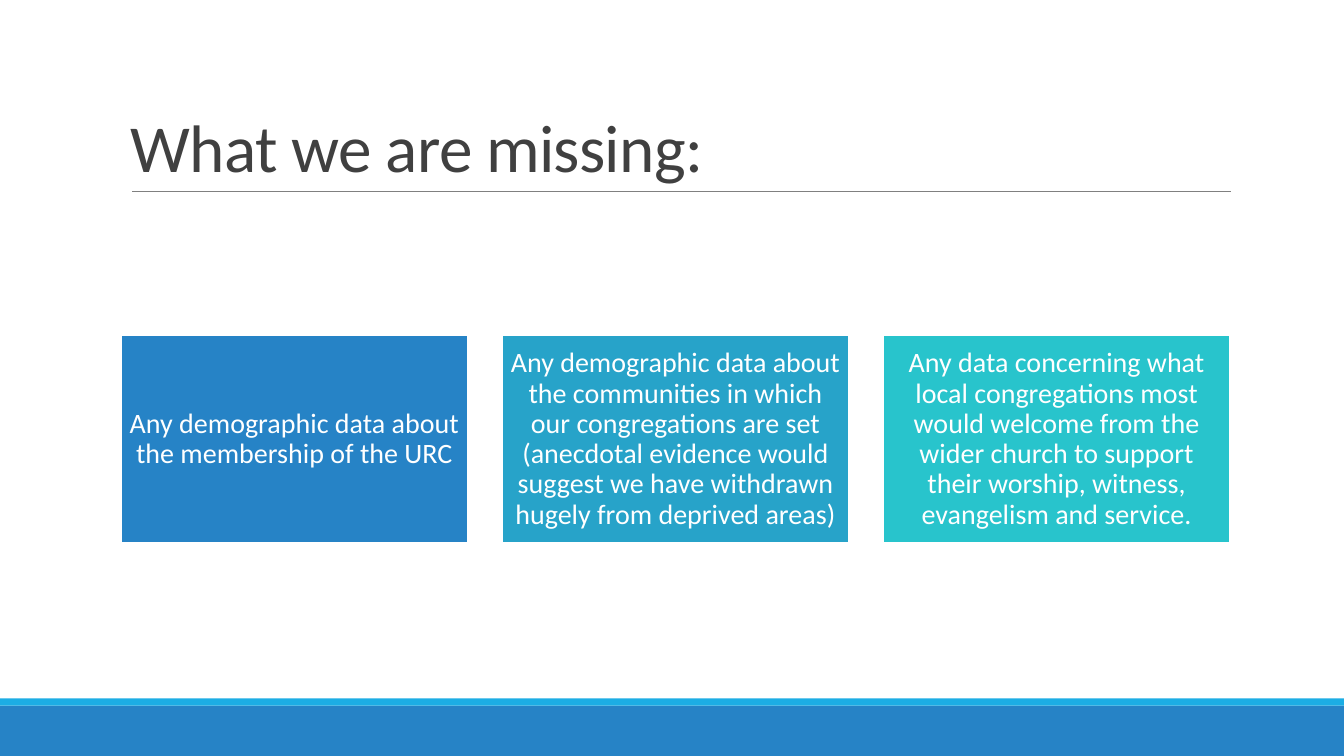
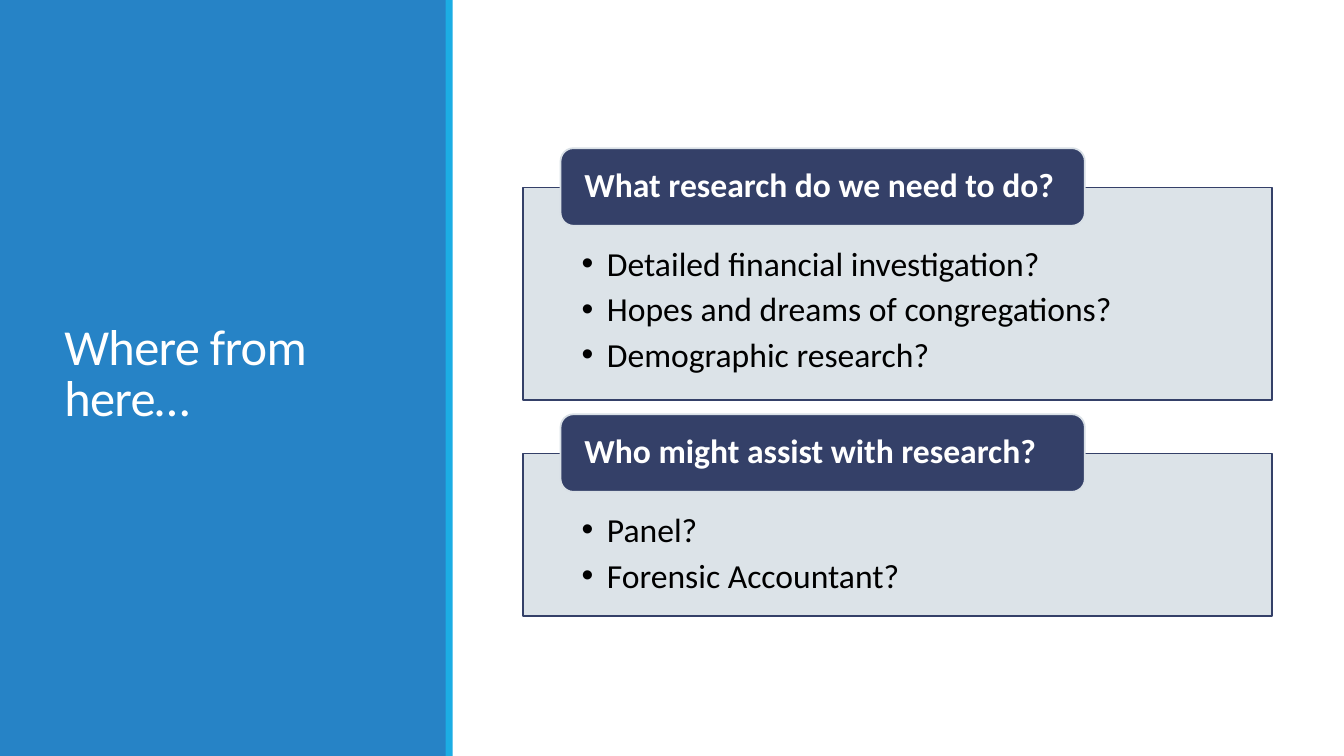
from dataclasses import dataclass

from lxml.etree import SubElement
from pptx import Presentation
from pptx.dml.color import RGBColor
from pptx.enum.shapes import MSO_CONNECTOR, MSO_SHAPE
from pptx.enum.text import MSO_ANCHOR, PP_ALIGN
from pptx.oxml.ns import qn
from pptx.util import Inches, Pt

MISSING_TITLE = "What we are missing:"
MISSING_CARDS = [
    ("2683C6", "Any demographic data about the membership of the URC"),
    ("27A3C9", "Any demographic data about the communities in which our congregations are set "
               "(anecdotal evidence would suggest we have withdrawn hugely from deprived areas)"),
    ("28C4CC", "Any data concerning what local congregations most would welcome from the wider "
               "church to support their worship, witness, evangelism and service."),
]
NEXT_TITLE = "Where from here…"
NEXT_PANELS = [
    ("What research do we need to do?", 2.11,
     ["Detailed financial investigation?", "Hopes and dreams of congregations?",
      "Demographic research?"]),
    ("Who might assist with research?", 1.61, ["Panel?", "Forensic Accountant?"]),
]


@dataclass(frozen=True)
class Theme:
    font: str = "Calibri"
    blue: str = "2683C6"
    cyan: str = "1CADE4"
    navy: str = "344068"
    pale: str = "D9E0E6"
    rule: str = "808080"
    title: str = "404040"
    white: str = "FFFFFF"
    black: str = "000000"
    title_size: int = 48
    side_title_size: int = 36
    panel_size: int = 24
    card_size: int = 20
    outline: float = 1.25


THEME = Theme()
WIDTH, HEIGHT = 13.33, 7.5


def color(value):
    return RGBColor.from_string(value)


def add_box(slide, at, fill, line=None, kind=MSO_SHAPE.RECTANGLE):
    shape = slide.shapes.add_shape(kind, *map(Inches, at))
    shape.shadow.inherit = False
    shape.fill.solid()
    shape.fill.fore_color.rgb = color(fill)
    if line:
        shape.line.color.rgb = color(line)
        shape.line.width = Pt(THEME.outline)
    else:
        shape.line.fill.background()
    return shape


def write(shape, lines, size, ink, insets=(0.1, 0.05, 0.1, 0.05), bold=False,
          anchor=MSO_ANCHOR.MIDDLE, **paragraph_format):
    frame = shape.text_frame
    frame.word_wrap = True
    frame.vertical_anchor = anchor
    for side, inset in zip(("left", "top", "right", "bottom"), insets):
        setattr(frame, f"margin_{side}", Inches(inset))
    paragraph_format = {"alignment": PP_ALIGN.LEFT} | paragraph_format
    font_format = {"name": THEME.font, "size": Pt(size), "bold": bold}
    for index, text in enumerate(lines):
        paragraph = frame.add_paragraph() if index else frame.paragraphs[0]
        run = paragraph.add_run()
        run.text = text
        for name, value in paragraph_format.items():
            setattr(paragraph, name, value)
        for name, value in font_format.items():
            setattr(run.font, name, value)
        run.font.color.rgb = color(ink)
    return frame


def add_title(slide, at, text, size, ink, anchor):
    box = slide.shapes.add_textbox(*map(Inches, at))
    frame = write(box, [text], size, ink, anchor=anchor, line_spacing=0.85)
    frame.paragraphs[0].runs[0].font._element.set("spc", "-50")


def add_bullets(frame):
    for paragraph in frame.paragraphs:
        properties = paragraph._p.get_or_add_pPr()
        properties.set("marL", str(Inches(0.25)))
        properties.set("indent", str(Inches(-0.25)))
        SubElement(properties, qn("a:buFont")).set("typeface", "Arial")
        SubElement(properties, qn("a:buChar")).set("char", "•")


def set_opacity(shape, percent):
    fill = shape._element.spPr.find(qn("a:solidFill"))
    SubElement(fill[0], qn("a:alpha")).set("val", str(percent * 1000))


def add_rule(slide, left, right, top):
    rule = slide.shapes.add_connector(
        MSO_CONNECTOR.STRAIGHT, *map(Inches, (left, top, right, top)))
    rule.line.color.rgb = color(THEME.rule)
    rule.line.width = Pt(0.5)
    SubElement(rule._element.spPr, qn("a:effectLst"))


def build_missing(slide):
    add_box(slide, (0, 7, WIDTH, 0.5), THEME.blue)
    add_box(slide, (0, 6.93, WIDTH, 0.07), THEME.cyan)
    add_rule(slide, 1.31, 12.21, 1.9)
    add_title(slide, (1.2, 0.31, 11, 1.59), MISSING_TITLE, THEME.title_size,
              THEME.title, MSO_ANCHOR.BOTTOM)
    left, width, gap = 1.2, 3.44, 0.34
    for index, (fill, text) in enumerate(MISSING_CARDS):
        card = add_box(slide, (left + index * (width + gap), 3.33, width, 2.06),
                       fill, THEME.white)
        write(card, [text], THEME.card_size, THEME.white, (0.08,) * 4,
              alignment=PP_ALIGN.CENTER, line_spacing=0.9)


def build_next(slide):
    add_box(slide, (0, 0, 4.43, HEIGHT), THEME.blue)
    add_title(slide, (0.54, 0.57, 3.37, 6.31), NEXT_TITLE, THEME.side_title_size,
              THEME.white, MSO_ANCHOR.MIDDLE)
    add_box(slide, (4.42, 0, 0.07, HEIGHT), THEME.cyan)
    left, top, gap = 5.19, 1.86, 0.53
    for heading, height, items in NEXT_PANELS:
        panel = add_box(slide, (left, top, 7.43, height), THEME.pale, THEME.navy)
        set_opacity(panel, 90)
        add_bullets(write(panel, items, THEME.panel_size, THEME.black,
                          (0.58, 0.55, 0.58, 0.19), anchor=MSO_ANCHOR.TOP,
                          space_after=Pt(3.6)))
        tab = add_box(slide, (left + 0.37, top - 0.39, 5.2, 0.77), THEME.navy,
                      THEME.pale, MSO_SHAPE.ROUNDED_RECTANGLE)
        write(tab, [heading], THEME.panel_size, THEME.white, (0.2, 0, 0.2, 0),
              bold=True, line_spacing=0.9)
        top += height + gap


def main():
    presentation = Presentation()
    presentation.slide_width = Inches(WIDTH)
    presentation.slide_height = Inches(HEIGHT)
    for build in (build_missing, build_next):
        build(presentation.slides.add_slide(presentation.slide_layouts[6]))
    presentation.save("out.pptx")


if __name__ == "__main__":
    main()
